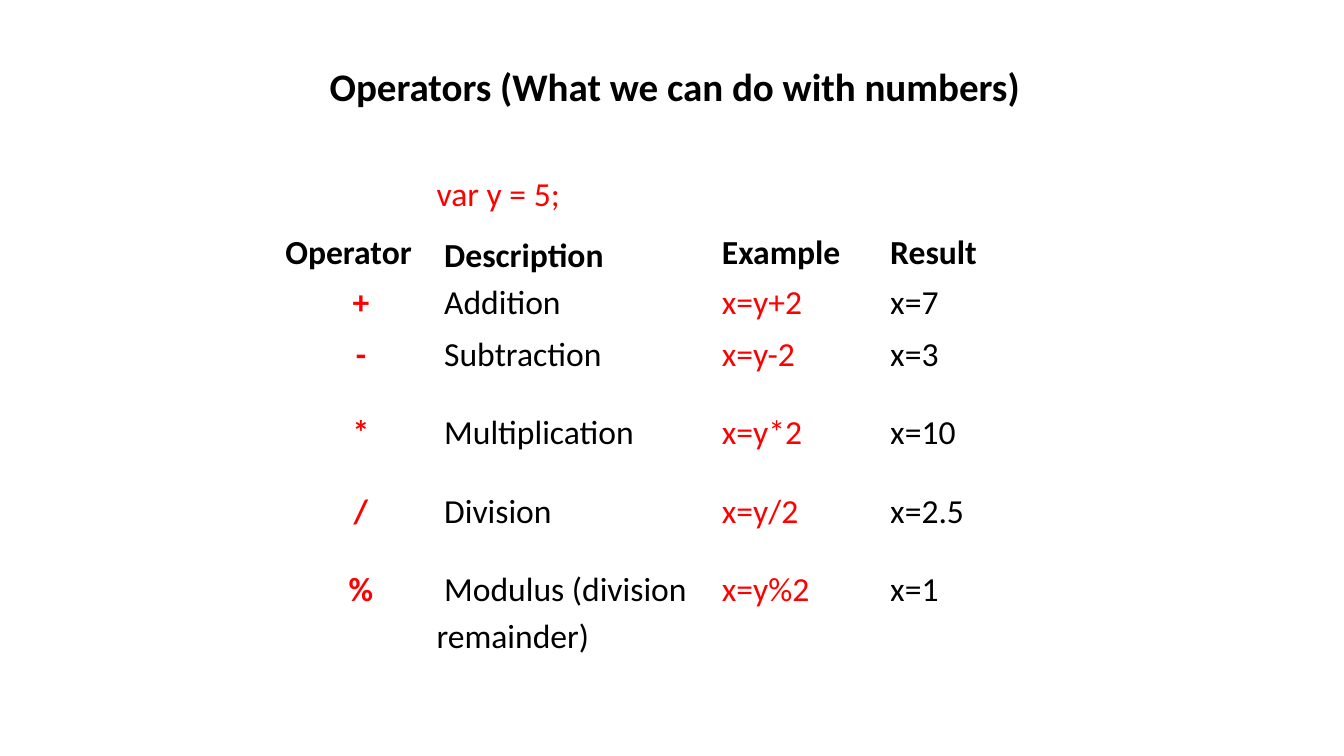
import pptx
import pptx.dml.color
import pptx.enum.text
import pptx.util

Inches = pptx.util.Inches
Pt = pptx.util.Pt
Align = pptx.enum.text.PP_ALIGN
Anchor = pptx.enum.text.MSO_ANCHOR

BLACK = "000000"
RED = "FF0000"


def colour(value):
    return pptx.dml.color.RGBColor.from_string(value)


class OperatorPage:
    font_name = "Calibri"
    title_size = 27.9
    table_size = 24

    def __init__(self, deck):
        self.page = deck.slides.add_slide(deck.slide_layouts[5])

    def style(self, para, size, ink, bold, align=Align.LEFT):
        para.alignment = align
        para.font.name = self.font_name
        para.font.size = Pt(size)
        para.font.bold = bold
        para.font.color.rgb = colour(ink)

    def title(self, text, left, top, width, height):
        box = self.page.shapes.title
        box.left, box.top = Inches(left), Inches(top)
        box.width, box.height = Inches(width), Inches(height)
        frame = box.text_frame
        frame.text = text
        frame.word_wrap = True
        frame.auto_size = pptx.enum.text.MSO_AUTO_SIZE.NONE
        frame.vertical_anchor = Anchor.MIDDLE
        frame.margin_bottom = Inches(0.29)
        para = frame.paragraphs[0]
        para.line_spacing = 0.9
        self.style(para, self.title_size, BLACK, True)

    def table(self, left, top, widths, heights):
        table = self.page.shapes.add_table(
            len(heights), len(widths), Inches(left), Inches(top),
            Inches(sum(widths)), Inches(sum(heights))).table
        table.first_row = table.horz_banding = False
        for column, width in zip(table.columns, widths):
            column.width = Inches(width)
        for row, height in zip(table.rows, heights):
            row.height = Inches(height)
        return table

    def cell(self, cell, lines, anchor=Anchor.TOP, bottom=0):
        cell.fill.background()
        cell.vertical_anchor = anchor
        cell.margin_left = cell.margin_right = cell.margin_top = 0
        cell.margin_bottom = Inches(bottom)
        frame = cell.text_frame
        frame.text = "\n".join(line[0] for line in lines)
        for para, (text, *look) in zip(frame.paragraphs, lines):
            para.line_spacing = 1.15
            para.space_after = Pt(10)
            self.style(para, self.table_size, *look)


def main():
    deck = pptx.Presentation()
    deck.slide_width, deck.slide_height = Inches(13.33), Inches(7.5)
    page = OperatorPage(deck)
    page.title("Operators (What we can do with numbers)", 3.17, 0.68, 8.58, 0.65)

    table = page.table(2.83, 1.67, [1.5, 2.83, 1.67, 2.08],
                       [0.93, 0.51, 0.78, 0.78, 0.78, 0.95])
    for column, heading in enumerate(["Operator", " Description", "Example", "Result"]):
        lines = [(heading, BLACK, True)]
        if column == 1:
            lines.insert(0, ("var y = 5;", RED, False))
            page.cell(table.cell(0, column), lines, Anchor.MIDDLE)
        else:
            page.cell(table.cell(0, column), lines, Anchor.BOTTOM, 0.03)

    operators = [
        ("+", " Addition", "x=y+2", "x=7"),
        ("-", " Subtraction", "x=y-2", "x=3"),
        ("*", " Multiplication", "x=y*2", "x=10"),
        ("/", " Division", "x=y/2", "x=2.5"),
        ("%", " Modulus (division remainder)", "x=y%2", "x=1"),
    ]
    looks = [(RED, True, Align.CENTER), (BLACK, False), (RED, False), (BLACK, False)]
    for row, operator in enumerate(operators, start=1):
        for column, (text, look) in enumerate(zip(operator, looks)):
            page.cell(table.cell(row, column), [(text, *look)])

    deck.save("out.pptx")


if __name__ == "__main__":
    main()
